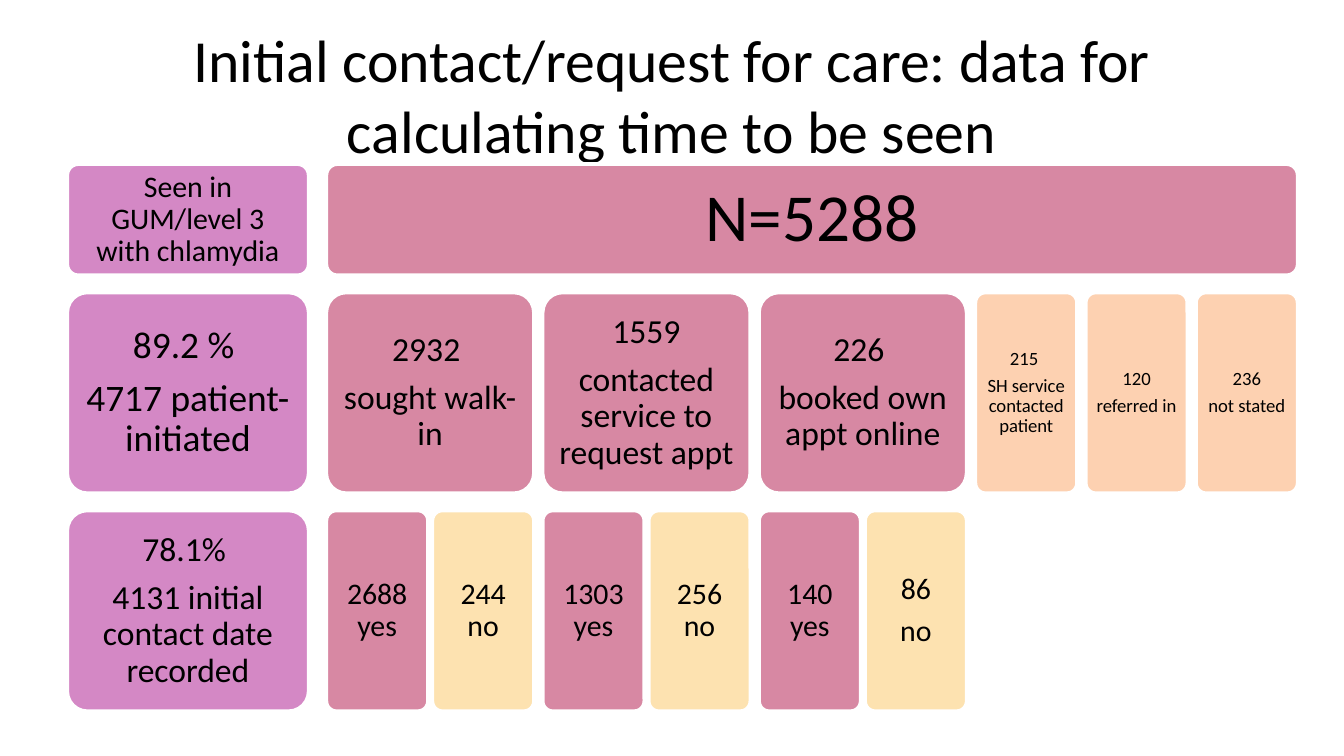
from pptx import Presentation
from pptx.dml.color import RGBColor
from pptx.enum.shapes import MSO_SHAPE
from pptx.enum.text import MSO_ANCHOR, MSO_AUTO_SIZE, PP_ALIGN
from pptx.util import Pt

ROUNDED = MSO_SHAPE.ROUNDED_RECTANGLE
MIDDLE = MSO_ANCHOR.MIDDLE
NO_FIT = MSO_AUTO_SIZE.NONE
CENTER = PP_ALIGN.CENTER

FONT = "Calibri"
BLACK, WHITE = "000000", "FFFFFF"
ORCHID, ROSE, PEACH, CREAM = "D488C5", "D788A3", "FDD1B1", "FDE2B0"
CORNER = 0.1
CORNER_INSET = 0.29

LABEL_LEFT, LABEL_WIDTH = 36, 129.4
CHART_LEFT = 174.8
LEAF_WIDTH, LEAF_GAP, GROUP_GAP = 54.5, 2.3, 4.6
GROUP_WIDTH = 2 * LEAF_WIDTH + LEAF_GAP
ROW_GAP = 9.2
HEADER_TOP, HEADER_HEIGHT, ROW_HEIGHT = 87.9, 59.6, 107.6
ROUTE_TOP = HEADER_TOP + HEADER_HEIGHT + ROW_GAP
RECORD_TOP = ROUTE_TOP + ROW_HEIGHT + ROW_GAP

LABELS = [
    (HEADER_TOP, HEADER_HEIGHT, ["Seen in GUM/level 3 with chlamydia"], 16),
    (ROUTE_TOP, ROW_HEIGHT, ["89.2 % ", "4717 patient-initiated"], 20),
    (RECORD_TOP, ROW_HEIGHT, ["78.1% ", "4131 initial contact date recorded"], 18),
]
ROUTES = [
    (["2932 ", "sought walk-in"], ["2688 yes"], ["244 no"]),
    (["1559", "contacted service to request appt"], ["1303 yes"], ["256 no"]),
    (["226 ", "booked own appt online"], ["140 yes"], ["86", "no"]),
]
OTHER_ROUTES = [
    ["215 ", "SH service contacted patient"],
    ["120", "referred in"],
    ["236", "not stated"],
]


def color(value):
    return RGBColor.from_string(value)


def apply_format(target, values):
    for name, value in values.items():
        setattr(target, name, value)


def write_para(para, text, size, values):
    apply_format(para, {"alignment": CENTER, **values})
    span = para.add_run()
    span.text = text
    apply_format(span.font, {"name": FONT, "size": Pt(size)})
    span.font.color.rgb = color(BLACK)


def add_title(page, text):
    title = page.shapes.title
    apply_format(title, {"left": Pt(36), "top": Pt(16.6),
                         "width": Pt(648), "height": Pt(67.7)})
    apply_format(title.text_frame, {"vertical_anchor": MIDDLE, "word_wrap": True,
                                    "auto_size": NO_FIT})
    write_para(title.text_frame.paragraphs[0], text, 32, {})


def add_box(page, bounds, fill, lines, size, inset=7.6):
    box = page.shapes.add_shape(ROUNDED, *(Pt(length) for length in bounds))
    box.shadow.inherit = False
    box.adjustments[0] = CORNER
    box.fill.solid()
    box.fill.fore_color.rgb = color(fill)
    box.line.color.rgb = color(WHITE)
    box.line.width = Pt(2)
    frame = box.text_frame
    margin = Pt(inset - CORNER_INSET * CORNER * min(bounds[2:]))
    sides = ("left", "top", "right", "bottom")
    apply_format(frame, {f"margin_{side}": margin for side in sides})
    apply_format(frame, {"word_wrap": True, "vertical_anchor": MIDDLE})
    for index, text in enumerate(lines):
        para = frame.add_paragraph() if index else frame.paragraphs[0]
        is_last = index == len(lines) - 1
        space = Pt(0 if is_last else 0.35 * size)
        write_para(para, text, size, {"line_spacing": 0.9, "space_after": space})


def add_route(page, left, route, yes, no):
    add_box(page, (left, ROUTE_TOP, GROUP_WIDTH, ROW_HEIGHT), ROSE, route, 18)
    for index, (lines, fill) in enumerate(((yes, ROSE), (no, CREAM))):
        leaf_left = left + index * (LEAF_WIDTH + LEAF_GAP)
        bounds = (leaf_left, RECORD_TOP, LEAF_WIDTH, ROW_HEIGHT)
        add_box(page, bounds, fill, lines, 16, 6)


def main():
    deck = Presentation()
    deck.slide_width, deck.slide_height = Pt(720), Pt(405)
    page = deck.slides.add_slide(deck.slide_layouts[5])
    add_title(page, "Initial contact/request for care: data for calculating time to be seen")
    for top, height, lines, size in LABELS:
        add_box(page, (LABEL_LEFT, top, LABEL_WIDTH, height), ORCHID, lines, size)

    header_width = 3 * (GROUP_WIDTH + LEAF_WIDTH) + 5 * GROUP_GAP
    header = (CHART_LEFT, HEADER_TOP, header_width, HEADER_HEIGHT)
    add_box(page, header, ROSE, ["N=5288"], 36)

    left = CHART_LEFT
    for route, yes, no in ROUTES:
        add_route(page, left, route, yes, no)
        left += GROUP_WIDTH + GROUP_GAP
    for lines in OTHER_ROUTES:
        add_box(page, (left, ROUTE_TOP, LEAF_WIDTH, ROW_HEIGHT), PEACH, lines, 10, 4.3)
        left += LEAF_WIDTH + GROUP_GAP
    deck.save("out.pptx")


if __name__ == "__main__":
    main()
